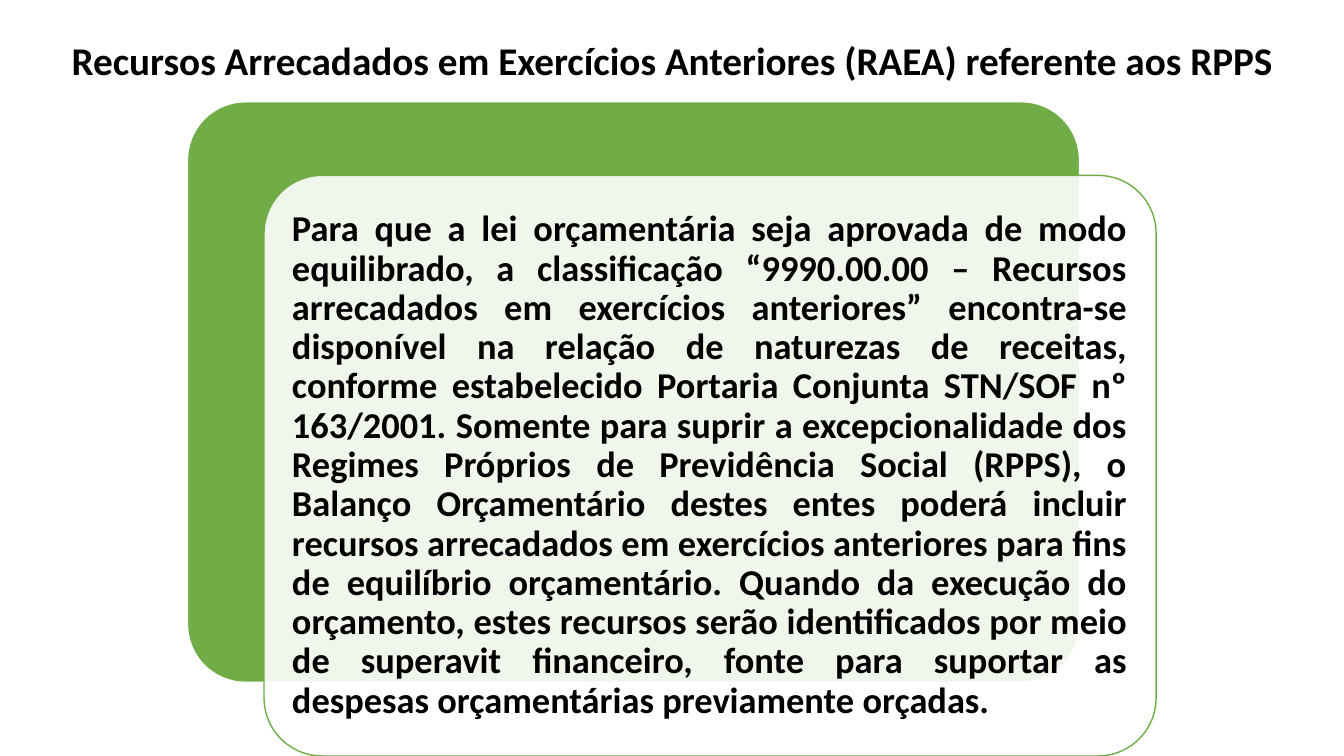
from lxml import etree
from pptx import Presentation
from pptx.dml.color import RGBColor
from pptx.enum.shapes import MSO_SHAPE
from pptx.enum.text import MSO_ANCHOR, PP_ALIGN
from pptx.oxml.ns import qn
from pptx.util import Pt

ROUNDED = MSO_SHAPE.ROUNDED_RECTANGLE
MIDDLE = MSO_ANCHOR.MIDDLE
CENTER, JUSTIFY = PP_ALIGN.CENTER, PP_ALIGN.JUSTIFY

TITLE = "Recursos Arrecadados em Exercícios Anteriores (RAEA) referente aos RPPS"
BODY = (
    "Para que a lei orçamentária seja aprovada de modo equilibrado, a classificação "
    "“9990.00.00 – Recursos arrecadados em exercícios anteriores” encontra-se disponível "
    "na relação de naturezas de receitas, conforme estabelecido Portaria Conjunta STN/SOF "
    "nº 163/2001. Somente para suprir a excepcionalidade dos Regimes Próprios de "
    "Previdência Social (RPPS), o Balanço Orçamentário destes entes poderá incluir "
    "recursos arrecadados em exercícios anteriores para fins de equilíbrio orçamentário. "
    "Quando da execução do orçamento, estes recursos serão identificados por meio de "
    "superavit financeiro, fonte para suportar as despesas orçamentárias previamente orçadas."
)
GREEN, WHITE, BLACK = "70AD47", "FFFFFF", "000000"
SLIDE_W, SLIDE_H = 960, 540
TITLE_H = 89.3
PANEL_W, PANEL_H = 637.2, 414.7
BACK_X, BACK_Y = 133.9, 72.7
SHIFT_X, SHIFT_Y = 54.7, 52.6
PAD = 12.2


def color(value):
    return RGBColor.from_string(value)


def add_panel(s, x, y, fill, line, opacity=100):
    sp = s.shapes.add_shape(ROUNDED, Pt(x), Pt(y), Pt(PANEL_W), Pt(PANEL_H))
    sp.shadow.inherit = False
    sp.adjustments[0] = 0.1
    sp.fill.solid()
    sp.fill.fore_color.rgb = color(fill)
    sp.line.color.rgb = color(line)
    sp.line.width = Pt(1)
    if opacity < 100:
        rgb = sp.fill._xPr.find(qn("a:solidFill")).find(qn("a:srgbClr"))
        etree.SubElement(rgb, qn("a:alpha")).set("val", str(opacity * 1000))


def add_text(s, text, x, y, w, h, size, align, inset):
    tf = s.shapes.add_textbox(Pt(x), Pt(y), Pt(w), Pt(h)).text_frame
    tf.word_wrap = True
    tf.vertical_anchor = MIDDLE
    tf.margin_left = tf.margin_right = tf.margin_top = tf.margin_bottom = Pt(inset)
    p = tf.paragraphs[0]
    p.text = text
    p.alignment = align
    p.line_spacing = 0.9
    p.font.name = "Calibri"
    p.font.size = Pt(size)
    p.font.bold = True
    p.font.color.rgb = color(BLACK)


prs = Presentation()
prs.slide_width, prs.slide_height = Pt(SLIDE_W), Pt(SLIDE_H)
s = prs.slides.add_slide(prs.slide_layouts[6])

front_x, front_y = BACK_X + SHIFT_X, BACK_Y + SHIFT_Y
add_text(s, TITLE, 0, 0, SLIDE_W, TITLE_H, 28, CENTER, 4)
add_panel(s, BACK_X, BACK_Y, GREEN, WHITE)
add_panel(s, front_x, front_y, WHITE, GREEN, 90)
add_text(s, BODY, front_x + PAD, front_y + PAD, PANEL_W - 2 * PAD, PANEL_H - 2 * PAD,
         26, JUSTIFY, 7.8)

prs.save("out.pptx")
